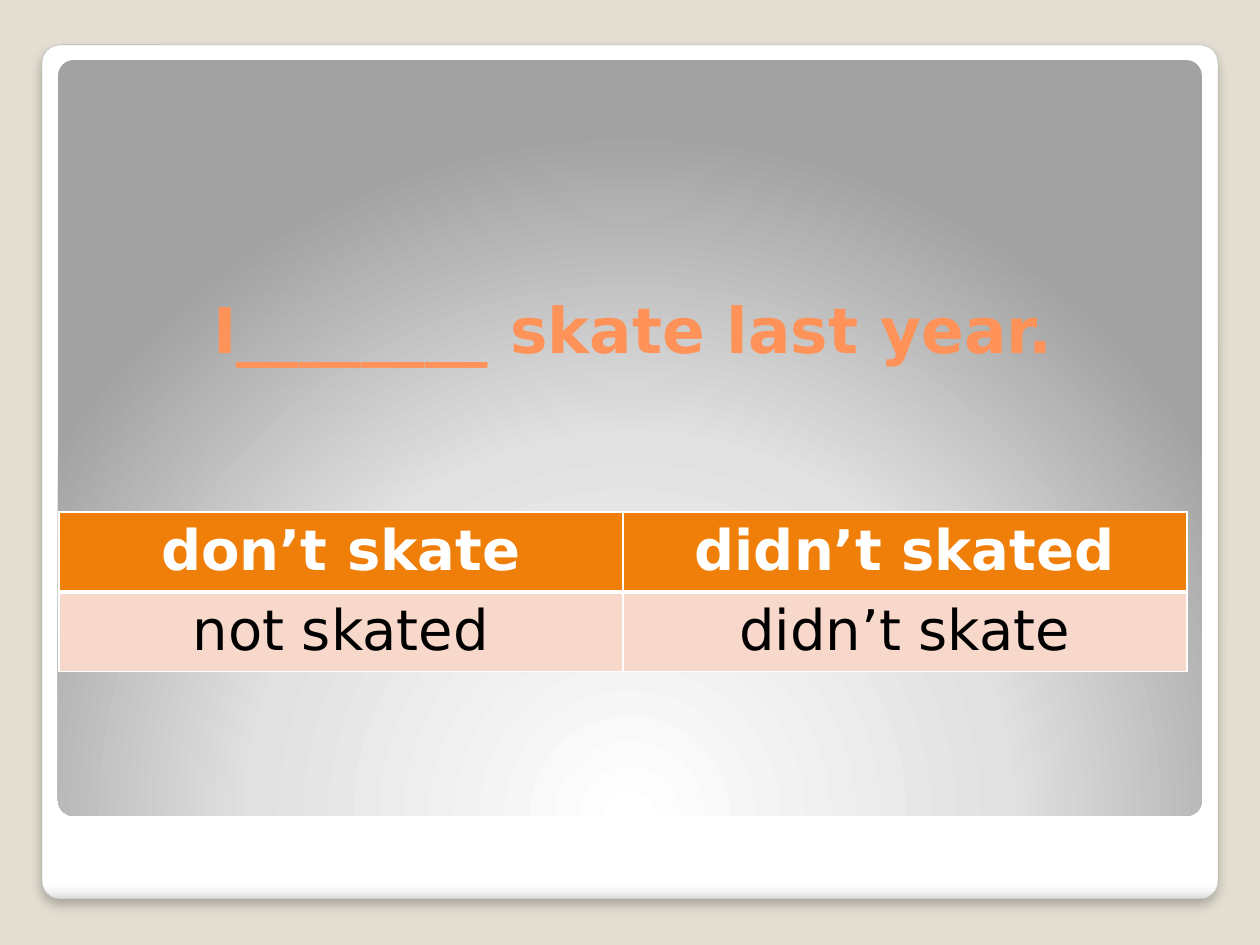
from pptx import Presentation
from pptx import util as u
from pptx.dml.color import RGBColor
from pptx.enum import shapes, text
from pptx.oxml import parse_xml
from pptx.oxml.ns import nsdecls, qn

PX = u.Inches(1) / 126
FONT = "DejaVu Sans"
BEIGE = RGBColor(0xE3, 0xDE, 0xD1)
GREY = RGBColor(0xA4, 0xA4, 0xA4)
CORAL = RGBColor(0xFF, 0x92, 0x58)
ORANGE = RGBColor(0xF0, 0x7F, 0x09)
PINK = RGBColor(0xF9, 0xD8, 0xCC)
WHITE = RGBColor(0xFF, 0xFF, 0xFF)
BLACK = RGBColor(0, 0, 0)

LINEAR_DOWN = '<a:lin ang="5400000" scaled="0"/>'
RADIAL_FROM_BOTTOM = ('<a:path path="circle"><a:fillToRect l="50000" t="175000" '
                      'r="50000" b="-75000"/></a:path>')
FRAME_STOPS = [(0, "FFFFFF"), (98, "FFFFFF"), (99, "F7F7F7"), (100, "DADADA")]
PANEL_STOPS = [(0, "FFFFFF"), (55, "E1E1E1"), (100, "A2A2A2")]
ANSWERS = [["don’t skate", "didn’t skated"], ["not skated", "didn’t skate"]]


def px(*lengths):
    return [round(length * PX) for length in lengths]


def add_panel(slide, box, stops, direction):
    panel = slide.shapes.add_shape(shapes.MSO_SHAPE.ROUNDED_RECTANGLE, *px(*box))
    panel.adjustments[0] = 0.021
    panel.shadow.inherit = False
    panel.line.fill.background()
    panel.fill.gradient()
    stop_xml = "".join(f'<a:gs pos="{pos * 1000}"><a:srgbClr val="{color}"/></a:gs>'
                       for pos, color in stops)
    properties = panel._element.spPr
    properties.replace(properties.find(qn("a:gradFill")), parse_xml(
        f'<a:gradFill {nsdecls("a")} rotWithShape="1"><a:gsLst>{stop_xml}</a:gsLst>'
        f'{direction}</a:gradFill>'))
    return panel


def add_shadow(panel):
    panel._element.spPr.find(qn("a:effectLst")).append(parse_xml(
        f'<a:outerShdw {nsdecls("a")} blurRad="{u.Pt(6)}" dist="{u.Pt(4)}" '
        'dir="5400000" algn="tl" rotWithShape="0"><a:srgbClr val="000000">'
        '<a:alpha val="25000"/></a:srgbClr></a:outerShdw>'))


def write(frame, words, size, color, bold):
    frame.text = words
    paragraph = frame.paragraphs[0]
    paragraph.alignment = text.PP_ALIGN.CENTER
    font = paragraph.runs[0].font
    font.name, font.size, font.bold = FONT, u.Pt(size), bold
    font.color.rgb = color


def add_question(slide, box, words):
    question = slide.shapes.add_textbox(*px(*box)).text_frame
    question.word_wrap = True
    question.vertical_anchor = text.MSO_ANCHOR.BOTTOM
    write(question, words, 36, CORAL, True)


def set_borders(cell, **widths):
    properties = cell._tc.get_or_add_tcPr()
    for index, (side, width) in enumerate(widths.items()):
        properties.insert(index, parse_xml(
            f'<a:ln{side} {nsdecls("a")} w="{u.Pt(width)}"><a:solidFill>'
            f'<a:srgbClr val="{WHITE}"/></a:solidFill></a:ln{side}>'))


def add_answers(slide, box, answers):
    table = slide.shapes.add_table(len(answers), len(answers[0]), *px(*box)).table
    for row, words_in_row in enumerate(answers):
        header = row == 0
        for column, words in enumerate(words_in_row):
            cell = table.cell(row, column)
            cell.fill.solid()
            cell.fill.fore_color.rgb = ORANGE if header else PINK
            write(cell.text_frame, words, 32, WHITE if header else BLACK, header)
            set_borders(cell, L=1, R=1, T=1 if header else 3, B=3 if header else 1)


def main():
    deck = Presentation()
    deck.slide_width, deck.slide_height = px(1260, 945)
    slide = deck.slides.add_slide(deck.slide_layouts[6])
    slide.background.fill.solid()
    slide.background.fill.fore_color.rgb = BEIGE

    # White frame and grey panel
    frame = add_panel(slide, (42, 45, 1176, 854), FRAME_STOPS, LINEAR_DOWN)
    frame.line.color.rgb = GREY
    frame.line.width = u.Pt(0.16)
    add_shadow(frame)
    add_panel(slide, (58, 60, 1144, 756), PANEL_STOPS, RADIAL_FROM_BOTTOM)

    # Question and its possible answers
    add_question(slide, (69, 227, 1128, 145), "I________ skate last year.")
    add_answers(slide, (59, 512, 1128, 156), ANSWERS)

    deck.save("out.pptx")


if __name__ == "__main__":
    main()
